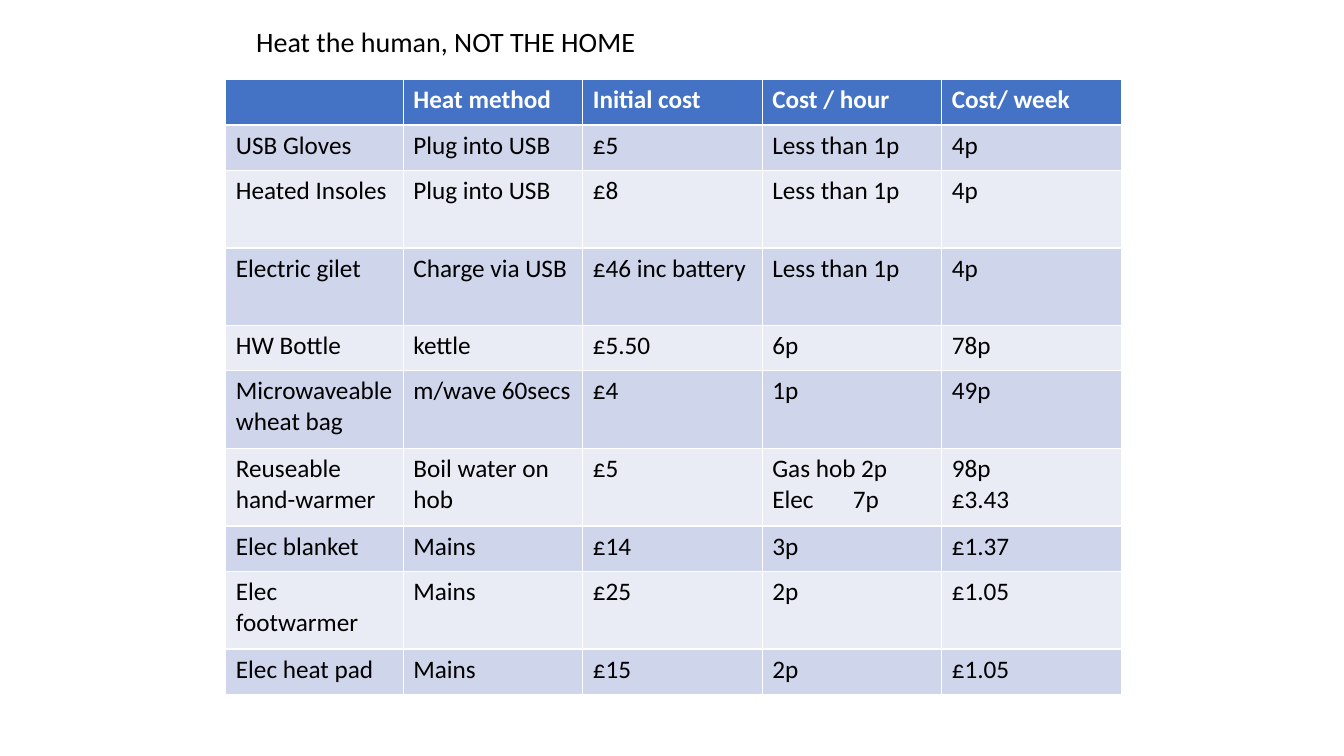
from lxml.etree import SubElement
from pptx import Presentation
from pptx.dml.color import RGBColor
from pptx.enum.text import MSO_ANCHOR, PP_ALIGN
from pptx.oxml.ns import qn
from pptx.util import Inches, Pt

BLUE = RGBColor(0x44, 0x72, 0xC4)
DARK = RGBColor(0xCF, 0xD5, 0xEA)
LIGHT = RGBColor(0xE9, 0xEB, 0xF5)
WHITE = RGBColor(0xFF, 0xFF, 0xFF)
BLACK = RGBColor(0, 0, 0)
FONT = "Calibri"

SHORT, TALL = 0.45, 0.77
ROWS = [
    (SHORT, "", "Heat method", "Initial cost", "Cost / hour", "Cost/ week"),
    (SHORT, "USB Gloves", "Plug into USB", "£5", "Less than 1p", "4p"),
    (TALL, "Heated Insoles", "Plug into USB", "£8", "Less than 1p", "4p"),
    (TALL, "Electric gilet", "Charge via USB", "£46 inc battery", "Less than 1p", "4p"),
    (SHORT, "HW Bottle", "kettle", "£5.50", "6p", "78p"),
    (TALL, "Microwaveable wheat bag", "m/wave 60secs", "£4", "1p", "49p"),
    (TALL, "Reuseable hand-warmer", "Boil water on hob", "£5",
     "Gas hob 2p\nElec\t7p", "98p\n£3.43"),
    (SHORT, "Elec blanket", "Mains", "£14", "3p", "£1.37"),
    (TALL, "Elec footwarmer", "Mains", "£25", "2p", "£1.05"),
    (SHORT, "Elec heat pad", "Mains", "£15", "2p", "£1.05"),
]
WIDTHS = [1.76] + [1.78] * 4


def style(para, size, color, bold=False):
    for run in para.runs:
        font = run.font
        font.name, font.size, font.bold = FONT, Pt(size), bold
        font.color.rgb = color


def add_tab(para, pos):
    """Set a left tab stop, in inches from the text edge."""
    tabs = SubElement(para._p.get_or_add_pPr(), qn("a:tabLst"))
    SubElement(tabs, qn("a:tab"), pos=str(Inches(pos)), algn="l")


def add_title(slide, left, top, width, height):
    title = slide.shapes.title
    title.left, title.top = Inches(left), Inches(top)
    title.width, title.height = Inches(width), Inches(height)
    frame = title.text_frame
    frame.text = "Heat the human, NOT THE HOME"
    frame.vertical_anchor = MSO_ANCHOR.MIDDLE
    para = frame.paragraphs[0]
    para.alignment = PP_ALIGN.LEFT
    para.line_spacing = 0.9
    style(para, 20, BLACK)


def fill_cell(cell, text, fill, color, bold):
    cell.fill.solid()
    cell.fill.fore_color.rgb = fill
    cell.text_frame.text = text
    for para in cell.text_frame.paragraphs:
        if "\t" in para.text:
            add_tab(para, 0.8)
        style(para, 18, color, bold)


def add_costs(slide, left, top):
    height = sum(row[0] for row in ROWS)
    frame = slide.shapes.add_table(
        len(ROWS), len(WIDTHS), Inches(left), Inches(top),
        Inches(sum(WIDTHS)), Inches(height))
    table = frame.table
    for col, width in zip(table.columns, WIDTHS):
        col.width = Inches(width)
    for i, (tall, *texts) in enumerate(ROWS):
        table.rows[i].height = Inches(tall)
        head = i == 0
        fill = BLUE if head else DARK if i % 2 else LIGHT
        for j, text in enumerate(texts):
            fill_cell(table.cell(i, j), text, fill, WHITE if head else BLACK, head)


def main():
    deck = Presentation()
    deck.slide_width, deck.slide_height = Inches(13.33), Inches(7.5)
    slide = deck.slides.add_slide(deck.slide_layouts[5])
    add_title(slide, 2.44, 0.19, 8.45, 0.49)
    add_costs(slide, 2.24, 0.79)
    deck.save("out.pptx")


if __name__ == "__main__":
    main()
